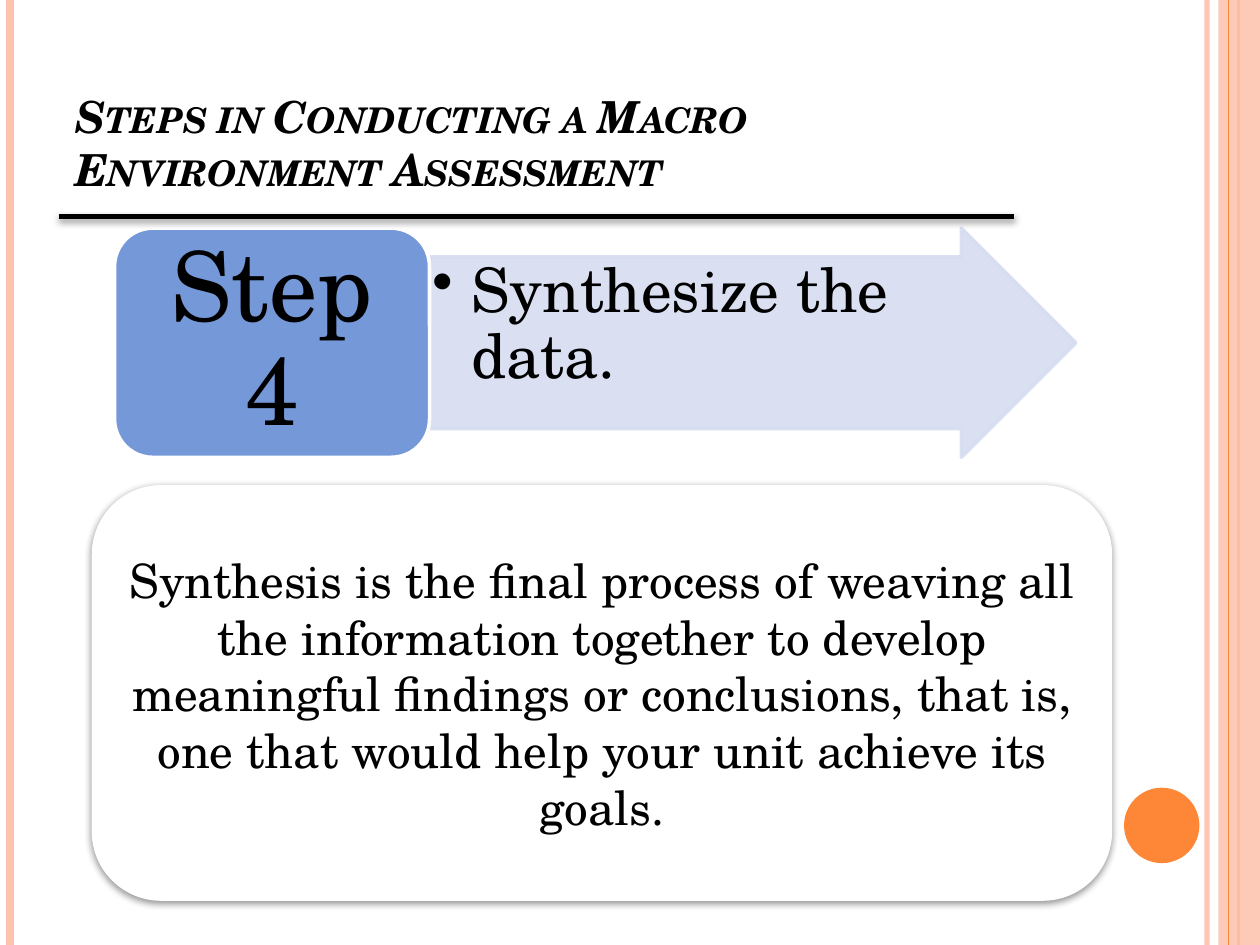
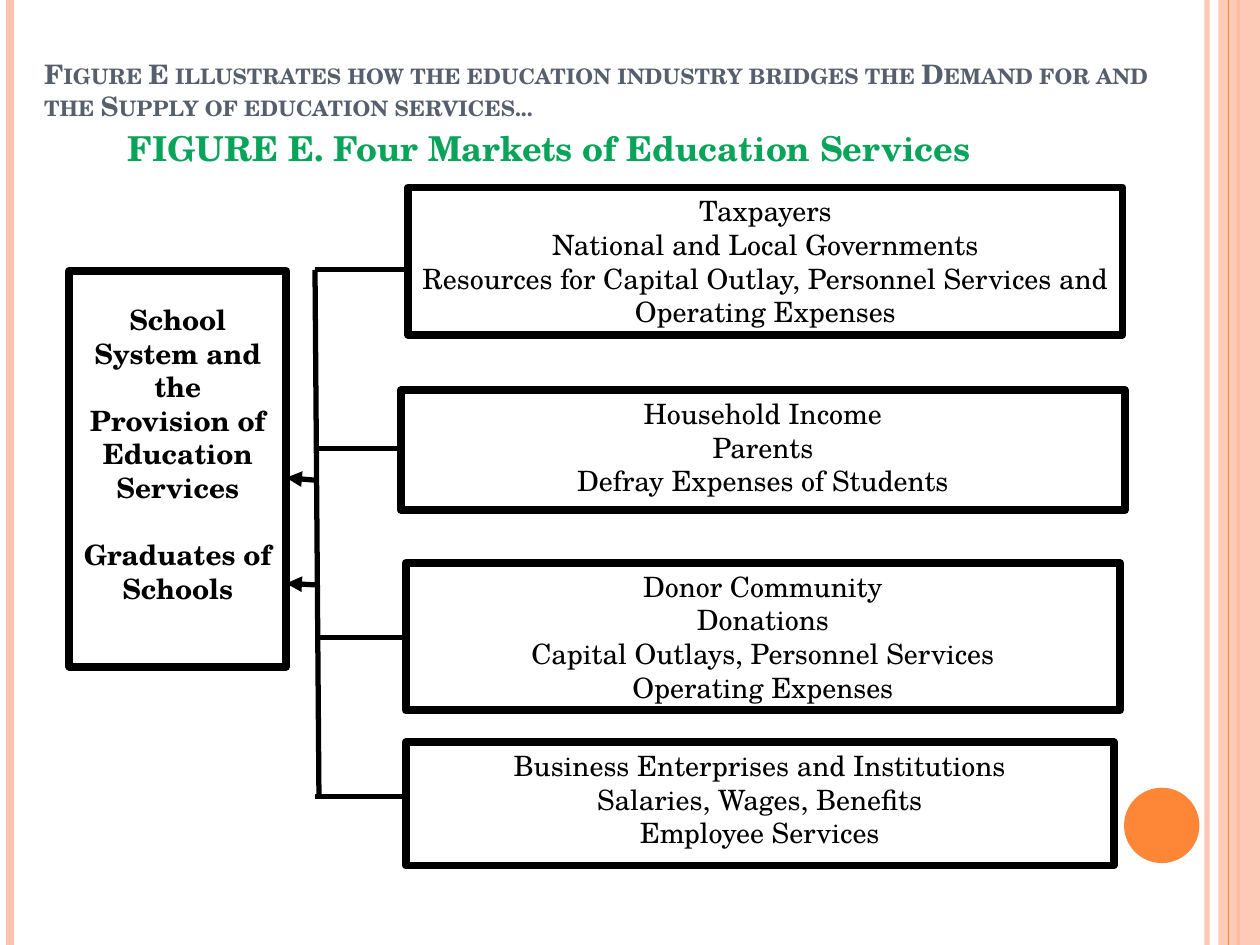
"""Build two slides on macro environment assessment and the education markets."""
from dataclasses import dataclass, field
from typing import Any, Optional

import pptx
import pptx.dml.color
import pptx.enum.shapes
import pptx.enum.text
import pptx.oxml
import pptx.oxml.ns
import pptx.shapes.autoshape
import pptx.slide
import pptx.util

Cm = pptx.util.Cm
Pt = pptx.util.Pt
RGBColor = pptx.dml.color.RGBColor
Preset = pptx.enum.shapes.MSO_SHAPE
Anchor = pptx.enum.text.MSO_ANCHOR
Align = pptx.enum.text.PP_ALIGN
qn = pptx.oxml.ns.qn

PEACH = RGBColor(0xFE, 0xC3, 0xAE)
ORANGE = RGBColor(0xFE, 0x86, 0x37)
BLACK = RGBColor(0, 0, 0)
WHITE = RGBColor(0xFF, 0xFF, 0xFF)
SLATE = RGBColor(0x57, 0x5F, 0x6D)
GREEN = RGBColor(0x08, 0xA4, 0x5A)
BLUE = RGBColor(0x75, 0x98, 0xD9)
PALE_BLUE = RGBColor(0xD6, 0xDD, 0xF1)

FONT = "TeX Gyre Schola"
WIDTH, HEIGHT = 25.4, 19.05
DEFAULT_INSETS = (0.25, 0.13, 0.25, 0.13)
SOFT_SHADOW = (
    '<a:effectLst xmlns:a="http://schemas.openxmlformats.org/drawingml/2006/main">'
    '<a:outerShdw blurRad="50800" dist="20320" dir="5400000" rotWithShape="0">'
    '<a:srgbClr val="000000"><a:alpha val="42000"/></a:srgbClr>'
    "</a:outerShdw></a:effectLst>"
)

Box = tuple[float, float, float, float]


@dataclass(frozen=True)
class Label:
    """Paragraphs with the format they share."""

    paragraphs: tuple[str, ...]
    size: float
    color: RGBColor = BLACK
    bold: bool = False
    italic: bool = False
    small_caps: bool = False
    bullet_indent: float = 0
    anchor: Any = Anchor.TOP
    insets: Box = DEFAULT_INSETS
    paragraph_format: dict[str, Any] = field(default_factory=lambda: {"alignment": Align.CENTER})


@dataclass(frozen=True)
class Panel:
    """A filled preset shape that may carry a label."""

    box: Box
    fill: RGBColor
    preset: Any = Preset.RECTANGLE
    line: Optional[RGBColor] = None
    line_width: float = 0
    opacity: int = 100
    shadow: bool = False
    adjustments: tuple[float, ...] = ()
    label: Optional[Label] = None


@dataclass(frozen=True)
class Link:
    """A straight line, with an optional arrowhead at its end."""

    start: tuple[float, float]
    end: tuple[float, float]
    width: float = 3
    color: RGBColor = BLACK
    opacity: int = 100
    arrow: bool = False
    shadow: bool = False


def rail(x: float, width: float, color: RGBColor, opacity: int = 100) -> Link:
    """Return a vertical line over the full slide height."""
    return Link((x, 0), (x, HEIGHT), width, color, opacity)


def market(box: Box, *lines: str) -> Panel:
    """Return a framed box that describes one market."""
    return Panel(box, WHITE, line=BLACK, line_width=4.5, label=Label(lines, 16))


FRAME = (
    rail(24.33, 3, PEACH, 93),
    rail(0.2, 4.5, PEACH),
    rail(24.97, 1.5, ORANGE),
    Panel((24.56, 0, 0.84, HEIGHT), PEACH, opacity=87),
    rail(24.77, 0.75, ORANGE),
    Panel((22.66, 15.88, 1.52, 1.52), ORANGE, Preset.OVAL),
)

LEFT = {"alignment": Align.LEFT}
STEP_TITLE = Label(
    ("Steps in Conducting a Macro Environment Assessment",), 25.2, bold=True, italic=True,
    small_caps=True, anchor=Anchor.BOTTOM, insets=(0.25, 0.13, 0.25, 1.19), paragraph_format=LEFT,
)
STEP_PARTS = (
    Panel(
        (8.66, 4.6, 13.03, 4.62), PALE_BLUE, Preset.RIGHT_ARROW, PALE_BLUE, 2, 90,
        adjustments=(0.75, 0.5),
        label=Label(
            ("Synthesize the data.",), 35, bullet_indent=0.79, insets=(0.05, 0.05, 1.19, 0.05),
            paragraph_format=LEFT | {"line_spacing": 0.9},
        ),
    ),
    Panel(
        (2.31, 4.6, 6.35, 4.62), BLUE, Preset.ROUNDED_RECTANGLE, WHITE, 2,
        label=Label(
            ("Step 4",), 55, anchor=Anchor.MIDDLE, insets=(0.58, 0.28, 0.58, 0.28),
            paragraph_format={"alignment": Align.CENTER, "line_spacing": 0.9},
        ),
    ),
    Link((1.19, 4.37), (20.45, 4.37), 2.75, shadow=True),
    Panel(
        (1.85, 9.78, 20.57, 8.38), WHITE, Preset.ROUNDED_RECTANGLE, shadow=True,
        label=Label(
            ("Synthesis is the final process of weaving all the information together to develop "
             "meaningful findings or conclusions, that is, one that would help your unit achieve "
             "its goals.",), 27, anchor=Anchor.MIDDLE,
        ),
    ),
)

MARKETS_TITLE = Label(
    ("Figure E illustrates how the education industry bridges the Demand for and the Supply of "
     "education services...",), 15.3, SLATE, bold=True, small_caps=True, anchor=Anchor.BOTTOM,
    paragraph_format=LEFT,
)
FIGURE_CAPTION = Label(("FIGURE E. Four Markets of Education Services",), 19.6, GREEN, bold=True)
SCHOOL_SYSTEM = Label(
    ("School System and the Provision of Education Services", "Graduates of Schools"),
    16, bold=True, insets=(0.25, 0.64, 0.25, 0.13),
    paragraph_format={"alignment": Align.CENTER, "space_after": Pt(19.2)},
)
TRUNK_X, SCHOOL_EDGE = 6.35, 5.77
MARKET_PARTS = (
    Panel((1.4, 5.46, 4.37, 7.98), WHITE, line=BLACK, line_width=4.5, label=SCHOOL_SYSTEM),
    Link((TRUNK_X, 5.44), (6.43, 16.08)),
    market(
        (8.23, 3.78, 14.4, 2.97), "Taxpayers", "National and Local Governments",
        "Resources for Capital Outlay, Personnel Services and Operating Expenses",
    ),
    market(
        (8.08, 7.87, 14.6, 2.41), "Household Income", "Parents", "Defray Expenses of Students",
    ),
    market(
        (8.18, 11.35, 14.4, 2.97), "Donor Community", "Donations",
        "Capital Outlays, Personnel Services", "Operating Expenses",
    ),
    market(
        (8.18, 14.96, 14.27, 2.49), "Business Enterprises and Institutions",
        "Salaries, Wages, Benefits", "Employee Services",
    ),
    *(
        Link((left, y), (right, y))
        for left, right, y in (
            (TRUNK_X, 8.23, 5.44), (TRUNK_X, 8.05, 9.04), (6.43, 8.26, 12.85), (TRUNK_X, 8.18, 16.05),
        )
    ),
    *(
        Link((TRUNK_X, start_y), (SCHOOL_EDGE, end_y), arrow=True)
        for start_y, end_y in ((9.68, 9.63), (11.79, 11.76))
    ),
)


def set_attributes(target: Any, values: dict[str, Any]) -> None:
    """Set every named attribute on the target."""
    for name, value in values.items():
        setattr(target, name, value)


def set_opacity(element: Any, percent: int) -> None:
    """Make every plain colour below the element partly transparent."""
    if percent < 100:
        for color in element.iter(qn("a:srgbClr")):
            color.makeelement(qn("a:alpha"))
            alpha = pptx.oxml.parse_xml(
                '<a:alpha xmlns:a="http://schemas.openxmlformats.org/drawingml/2006/main" '
                f'val="{percent * 1000}"/>'
            )
            color.append(alpha)


def add_bullet(paragraph: Any, indent: float) -> None:
    """Give the paragraph a round bullet with a hanging indent."""
    properties = paragraph._p.get_or_add_pPr()
    properties.set("marL", str(Cm(indent)))
    properties.set("indent", str(-Cm(indent)))
    bullet = properties.makeelement(qn("a:buChar"), {"char": "•"})
    properties.append(bullet)


def write_label(shape: pptx.shapes.autoshape.Shape, label: Label) -> None:
    """Write the label into the shape."""
    frame = shape.text_frame
    left, top, right, bottom = map(Cm, label.insets)
    set_attributes(frame, {
        "word_wrap": True, "vertical_anchor": label.anchor, "margin_left": left,
        "margin_top": top, "margin_right": right, "margin_bottom": bottom,
    })
    for index, text in enumerate(label.paragraphs):
        paragraph = frame.add_paragraph() if index else frame.paragraphs[0]
        set_attributes(paragraph, label.paragraph_format)
        if label.bullet_indent:
            add_bullet(paragraph, label.bullet_indent)
        run = paragraph.add_run()
        run.text = text
        set_attributes(run.font, {
            "name": FONT, "size": Pt(label.size), "bold": label.bold, "italic": label.italic,
        })
        run.font.color.rgb = label.color
        if label.small_caps:
            run._r.get_or_add_rPr().set("cap", "small")


def draw_text(slide: pptx.slide.Slide, box: Box, label: Label) -> None:
    """Draw a label without a frame."""
    write_label(slide.shapes.add_textbox(*map(Cm, box)), label)


def draw_panel(slide: pptx.slide.Slide, panel: Panel) -> None:
    """Draw a filled shape with its label."""
    shape = slide.shapes.add_shape(panel.preset, *map(Cm, panel.box))
    for index, value in enumerate(panel.adjustments):
        shape.adjustments[index] = value
    shape.fill.solid()
    shape.fill.fore_color.rgb = panel.fill
    if panel.line is None:
        shape.line.fill.background()
    else:
        shape.line.color.rgb = panel.line
        shape.line.width = Pt(panel.line_width)
    set_opacity(shape._element.spPr, panel.opacity)
    if panel.shadow:
        shape._element.spPr.append(pptx.oxml.parse_xml(SOFT_SHADOW))
    else:
        shape.shadow.inherit = False
    if panel.label:
        write_label(shape, panel.label)


def draw_link(slide: pptx.slide.Slide, link: Link) -> None:
    """Draw a straight line or arrow."""
    connector = slide.shapes.add_connector(
        pptx.enum.shapes.MSO_CONNECTOR.STRAIGHT, *map(Cm, link.start + link.end)
    )
    connector.line.color.rgb = link.color
    connector.line.width = Pt(link.width)
    properties = connector._element.spPr
    set_opacity(properties, link.opacity)
    if link.arrow:
        outline = connector.line._get_or_add_ln()
        outline.append(outline.makeelement(qn("a:tailEnd"), {"type": "triangle"}))
    if link.shadow:
        properties.append(pptx.oxml.parse_xml(SOFT_SHADOW))
    else:
        properties.append(properties.makeelement(qn("a:effectLst"), {}))


def draw_parts(slide: pptx.slide.Slide, parts: tuple[Panel | Link, ...]) -> None:
    """Draw panels and links from back to front."""
    for part in parts:
        if isinstance(part, Panel):
            draw_panel(slide, part)
        else:
            draw_link(slide, part)


def main() -> None:
    """Build and save the slides."""
    deck = pptx.Presentation()
    set_attributes(deck, {"slide_width": Cm(WIDTH), "slide_height": Cm(HEIGHT)})
    contents = (
        ((((1.27, 2.26, 16.66, 2.87), STEP_TITLE),), STEP_PARTS),
        ((((0.64, 0.99, 22.86, 1.6), MARKETS_TITLE),
          ((1.7, 2.44, 18.75, 1.3), FIGURE_CAPTION)), MARKET_PARTS),
    )
    for headings, parts in contents:
        slide = deck.slides.add_slide(deck.slide_layouts[6])
        draw_parts(slide, FRAME)
        for box, heading in headings:
            draw_text(slide, box, heading)
        draw_parts(slide, parts)
    deck.save("out.pptx")


if __name__ == "__main__":
    main()
